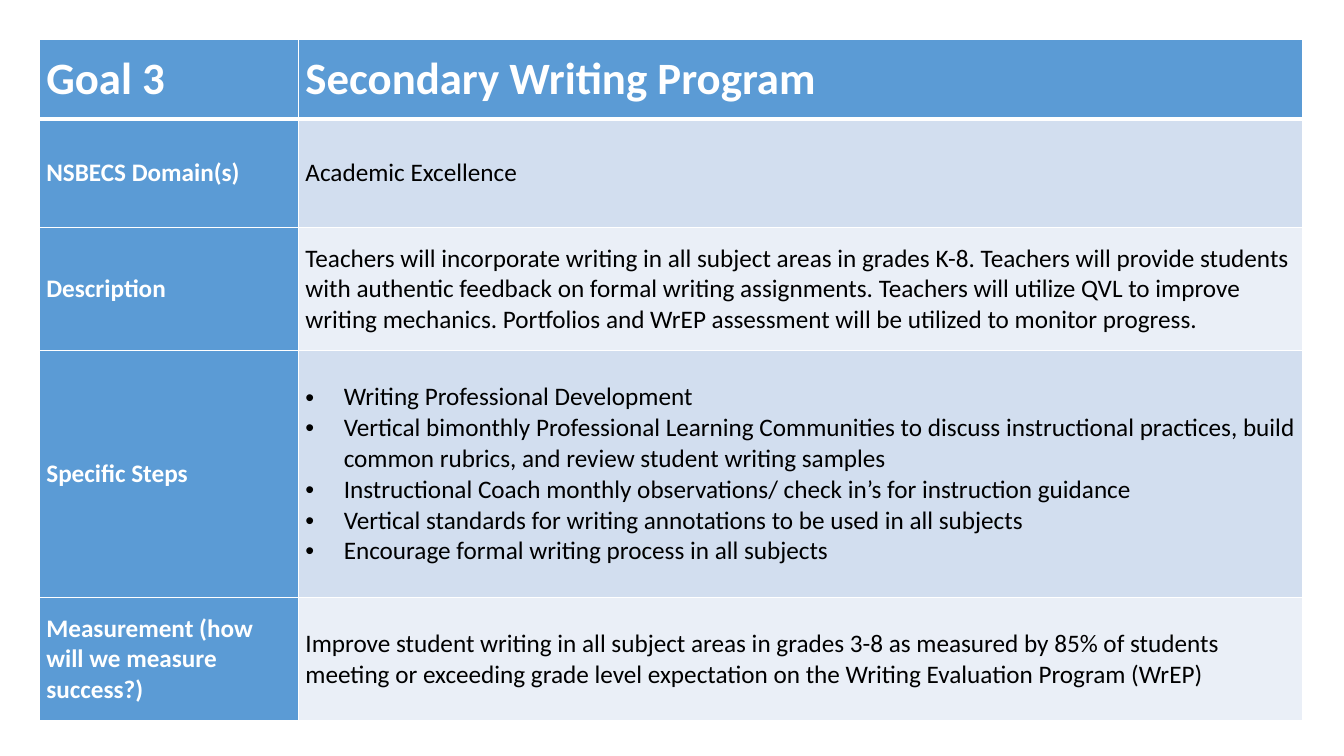
"""Build the Goal 3 slide: one table describing the secondary writing program."""
from dataclasses import dataclass

from lxml import etree
from pptx import Presentation
from pptx.dml.color import RGBColor
from pptx.enum.text import MSO_ANCHOR
from pptx.oxml.ns import qn
from pptx.table import _Cell
from pptx.util import Inches, Pt

MIDDLE = MSO_ANCHOR.MIDDLE
FONT = "Calibri"
COLORS = {
    "label": "5B9BD5",
    "odd": "D2DEEF",
    "even": "EAEFF7",
    "light": "FFFFFF",
    "dark": "000000",
}
COLUMN_WIDTHS = (2.57, 9.96)


@dataclass
class GoalRow:
    label: str
    text: str
    height: float
    bulleted: bool = False


ROWS = [
    GoalRow("Goal 3", "Secondary Writing Program", 0.79),
    GoalRow("NSBECS Domain(s)", "Academic Excellence", 1.08),
    GoalRow(
        "Description",
        "Teachers will incorporate writing in all subject areas in grades K-8. "
        "Teachers will provide students with authentic feedback on formal writing "
        "assignments. Teachers will utilize QVL to improve writing mechanics. "
        "Portfolios and WrEP assessment will be utilized to monitor progress.",
        1.22,
    ),
    GoalRow(
        "Specific Steps",
        "Writing Professional Development\n"
        "Vertical bimonthly Professional Learning Communities to discuss instructional "
        "practices, build common rubrics, and review student writing samples\n"
        "Instructional Coach monthly observations/ check in’s for instruction guidance\n"
        "Vertical standards for writing annotations to be used in all subjects\n"
        "Encourage formal writing process in all subjects",
        2.45,
        bulleted=True,
    ),
    GoalRow(
        "Measurement (how will we measure success?)",
        "Improve student writing in all subject areas in grades 3-8 as measured by 85% "
        "of students meeting or exceeding grade level expectation on the Writing "
        "Evaluation Program (WrEP)",
        1.22,
    ),
]


def set_borders(cell: _Cell, top: float, bottom: float) -> None:
    tcPr = cell._tc.get_or_add_tcPr()
    for side, width in (("L", 1), ("R", 1), ("T", top), ("B", bottom)):
        ln = etree.SubElement(tcPr, qn(f"a:ln{side}"), w=str(Pt(width)))
        fill = etree.SubElement(ln, qn("a:solidFill"))
        etree.SubElement(fill, qn("a:srgbClr"), val=COLORS["light"])


def add_bullet(p) -> None:
    pPr = p._p.get_or_add_pPr()
    pPr.set("marL", str(Inches(0.38)))
    pPr.set("indent", str(Inches(-0.38)))
    etree.SubElement(pPr, qn("a:buFont"), typeface="Arial")
    etree.SubElement(pPr, qn("a:buChar"), char="•")


def fill_cell(cell: _Cell, text: str, fill: str, size: float,
              strong: bool, bulleted: bool) -> None:
    cell.fill.solid()
    cell.fill.fore_color.rgb = RGBColor.from_string(COLORS[fill])
    cell.vertical_anchor = MIDDLE
    cell.margin_left = cell.margin_right = Inches(0.07)
    cell.margin_top = cell.margin_bottom = 0
    tf = cell.text_frame
    tf.text = text
    for p in tf.paragraphs:
        if bulleted:
            add_bullet(p)
        else:
            p.space_after = Pt(10)
        for r in p.runs:
            r.font.name = FONT
            r.font.size = Pt(size)
            r.font.bold = strong
            r.font.color.rgb = RGBColor.from_string(COLORS["light" if strong else "dark"])


def main() -> None:
    prs = Presentation()
    prs.slide_width, prs.slide_height = Inches(13.33), Inches(7.5)
    s = prs.slides.add_slide(prs.slide_layouts[6])
    table = s.shapes.add_table(
        len(ROWS), len(COLUMN_WIDTHS), Inches(0.39), Inches(0.39),
        Inches(sum(COLUMN_WIDTHS)), Inches(sum(row.height for row in ROWS)),
    ).table
    for column, width in zip(table.columns, COLUMN_WIDTHS):
        column.width = Inches(width)
    for i, row in enumerate(ROWS):
        table.rows[i].height = Inches(row.height)
        header = i == 0
        for j, text in enumerate((row.label, row.text)):
            strong = header or j == 0
            fill = "label" if strong else ("odd" if i % 2 else "even")
            cell = table.cell(i, j)
            set_borders(cell, 3 if i == 1 else 1, 3 if header else 1)
            fill_cell(cell, text, fill, 32 if header else 18, strong,
                      row.bulleted and j == 1)
    prs.save("out.pptx")


if __name__ == "__main__":
    main()
